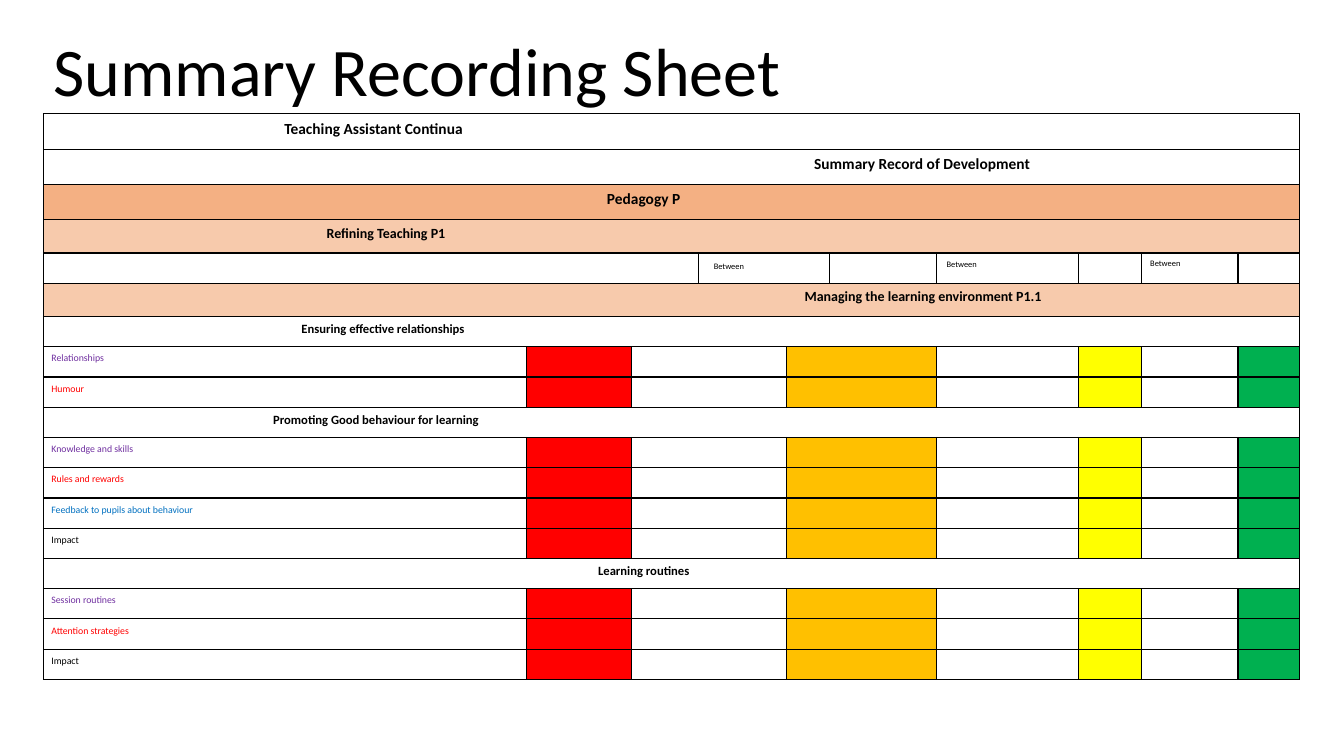
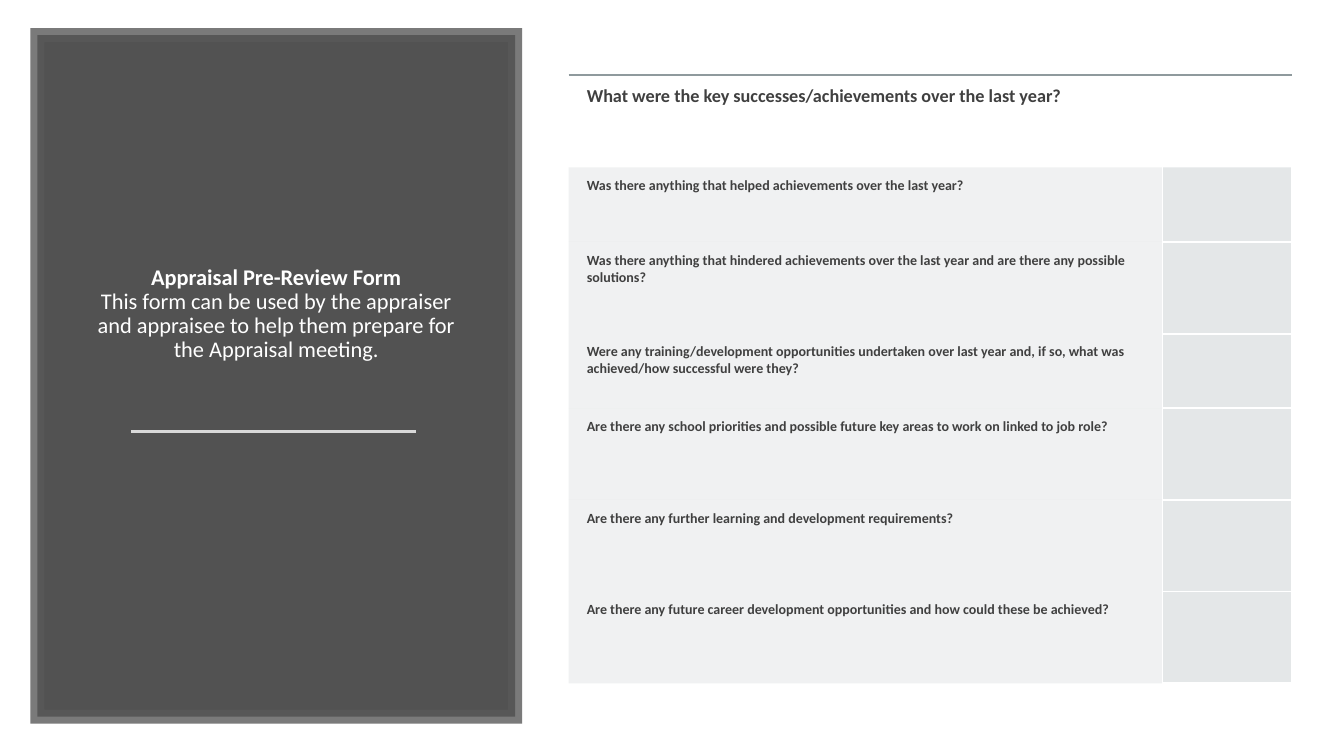
from dataclasses import dataclass

from lxml.etree import SubElement
from pptx import Presentation
from pptx.dml.color import RGBColor as Color
from pptx.enum.shapes import MSO_CONNECTOR as Connector, MSO_SHAPE as Preset
from pptx.enum.text import MSO_ANCHOR as Anchor, MSO_AUTO_SIZE as AutoSize, PP_ALIGN as Align
from pptx.oxml.ns import qn
from pptx.util import Inches, Pt


@dataclass(frozen=True)
class Theme:
    font: str = "Calibri"
    black: str = "000000"
    white: str = "FFFFFF"
    charcoal: str = "404040"
    panel_edge: str = "595959"
    panel_rule: str = "D9D9D9"
    form_rule: str = "8F9A9D"
    form_tint: str = "B4BCBE"
    orange: str = "F4B083"
    peach: str = "F7CAAC"
    red: str = "FF0000"
    amber: str = "FFC000"
    yellow: str = "FFFF00"
    green: str = "00B050"
    purple: str = "7030A0"
    blue: str = "0070C0"
    title_size: float = 48.6
    panel_size: float = 16
    lead_question_size: float = 13
    question_size: float = 10
    heading_size: float = 11
    subheading_size: float = 10
    group_size: float = 9
    label_size: float = 7
    scale_size: float = 6


THEME = Theme()
NO_STYLE_TABLE = "{2D5ABB26-0587-4C30-8999-92F81FD0307C}"

BANNER_SPLIT = 7
RECORD_COLUMNS = [4.79, 1.04, 0.67, 0.87, 0.43, 1.06, 1.41, 0.62, 0.96, 0.61]
SCALE_MARKS = {3: (0.15, 0.08), 6: (0.1, 0.06), 8: (0.09, 0.05)}
RATING_FILLS = {1: THEME.red, 4: THEME.amber, 7: THEME.yellow, 9: THEME.green}


@dataclass(frozen=True)
class Banner:
    text: str
    size: float
    height: float
    indent: float = 0
    right: float = 0.07
    align: Align = Align.LEFT
    fill: str = None


@dataclass(frozen=True)
class Rating:
    text: str
    color: str
    height: float = 0.3


@dataclass(frozen=True)
class Scale:
    height: float = 0.3


RECORD_ROWS = [
    Banner("Teaching Assistant Continua", THEME.heading_size, 0.35, indent=2.32),
    Banner("Summary Record of Development", THEME.heading_size, 0.35, right=0.48, align=Align.RIGHT),
    Banner("Pedagogy P", THEME.heading_size, 0.35, indent=1.64, align=Align.CENTER, fill=THEME.orange),
    Banner("Refining Teaching P1", THEME.subheading_size, 0.33, indent=2.74, fill=THEME.peach),
    Scale(),
    Banner("Managing the learning environment P1.1", THEME.subheading_size, 0.33,
           right=0.37, align=Align.RIGHT, fill=THEME.peach),
    Banner("Ensuring effective relationships", THEME.group_size, 0.3, indent=2.49),
    Rating("Relationships", THEME.purple),
    Rating("Humour", THEME.red),
    Banner("Promoting Good behaviour for learning", THEME.group_size, 0.3, indent=2.21),
    Rating("Knowledge and skills", THEME.purple),
    Rating("Rules and rewards", THEME.red),
    Rating("Feedback to pupils about behaviour", THEME.blue),
    Rating("Impact", THEME.black),
    Banner("Learning routines", THEME.group_size, 0.3, indent=1.64, align=Align.CENTER),
    Rating("Session routines", THEME.purple),
    Rating("Attention strategies", THEME.red),
    Rating("Impact", THEME.black),
]

QUESTIONS = [
    ("What were the key successes/achievements over the last year?", 0.92),
    ("Was there anything that helped achievements over the last year?", 0.74),
    ("Was there anything that hindered achievements over the last year and are there any possible solutions?", 0.91),
    ("Were any training/development opportunities undertaken over last year and, if so, "
     "what was achieved/how successful were they?", 0.74),
    ("Are there any school priorities and possible future key areas to work on linked to job role?", 0.91),
    ("Are there any further learning and development requirements?", 0.91),
    ("Are there any future career development opportunities and how could these be achieved?", 0.91),
]


def rgb(value):
    return Color.from_string(value)


def set_opacity(parent, percent):
    color = parent.find(qn("a:solidFill")).find(qn("a:srgbClr"))
    SubElement(color, qn("a:alpha")).set("val", str(percent * 1000))


def format_paragraph(paragraph, size, color, bold=False, align=Align.LEFT, spacing=1.0):
    paragraph.alignment = align
    paragraph.line_spacing = spacing
    for run in paragraph.runs:
        font = run.font
        font.name, font.size, font.bold = THEME.font, Pt(size), bold
        font.color.rgb = rgb(color)


def indent_paragraph(paragraph, indent):
    properties = paragraph._p.get_or_add_pPr()
    properties.set("marL", str(Inches(indent)))
    properties.set("indent", "0")


def place_title(slide, box, text, size, color, align, anchor, bold_lines=()):
    title = slide.shapes.title
    title.left, title.top, title.width, title.height = map(Inches, box)
    text_frame = title.text_frame
    text_frame.text = text
    text_frame.word_wrap = True
    text_frame.auto_size = AutoSize.NONE
    text_frame.vertical_anchor = anchor
    for index, paragraph in enumerate(text_frame.paragraphs):
        paragraph.space_before = Pt(0)
        format_paragraph(paragraph, size, color, index in bold_lines, align, 0.9)
    return title


def add_plain_table(slide, left, top, widths, heights):
    frame = slide.shapes.add_table(len(heights), len(widths), Inches(left), Inches(top),
                                   Inches(sum(widths)), Inches(sum(heights)))
    table = frame.table
    table.first_row = table.horz_banding = False
    table._tbl.tblPr.find(qn("a:tableStyleId")).text = NO_STYLE_TABLE
    for column, width in zip(table.columns, widths):
        column.width = Inches(width)
    for row, height in zip(table.rows, heights):
        row.height = Inches(height)
    for cell in table.iter_cells():
        set_margins(cell, 0.01, 0.02, 0.01, 0)
        paragraph = cell.text_frame.paragraphs[0]
        SubElement(paragraph._p, qn("a:endParaRPr")).set("sz", "800")
    return table


def set_margins(cell, left, top, right, bottom):
    cell.margin_left, cell.margin_top = Inches(left), Inches(top)
    cell.margin_right, cell.margin_bottom = Inches(right), Inches(bottom)


def style_cell(cell, borders, fill=None, opacity=100):
    properties = cell._tc.get_or_add_tcPr()
    for side in "LRTB":
        color, width = borders.get(side, (None, 0))
        line = SubElement(properties, qn(f"a:ln{side}"), w=str(Pt(width)))
        if color:
            solid = SubElement(line, qn("a:solidFill"))
            SubElement(solid, qn("a:srgbClr")).set("val", color)
        else:
            SubElement(line, qn("a:noFill"))
    if fill:
        cell.fill.solid()
        cell.fill.fore_color.rgb = rgb(fill)
        if opacity < 100:
            set_opacity(properties, opacity)
    else:
        cell.fill.background()


def write_cell(cell, text, margins, size, color, bold=False, align=Align.LEFT, spacing=1.07):
    cell.text_frame.text = text
    set_margins(cell, *margins)
    format_paragraph(cell.text_frame.paragraphs[0], size, color, bold, align, spacing)


def merge_spans(table, row, spans):
    for first, last in spans:
        table.cell(row, first).merge(table.cell(row, last))


def borders_for(sides):
    return {side: (THEME.black, 1) for side in sides}


def fill_banner(table, row, banner):
    last = len(RECORD_COLUMNS) - 1
    merge_spans(table, row, [(0, BANNER_SPLIT - 1), (BANNER_SPLIT, last)])
    for column, sides in ((0, "LTB"), (BANNER_SPLIT, "TRB")):
        style_cell(table.cell(row, column), borders_for(sides), banner.fill)
    heading = table.cell(row, 0)
    write_cell(heading, banner.text, (0.07, 0.04, banner.right, 0.04),
               banner.size, THEME.black, True, banner.align)
    indent_paragraph(heading.text_frame.paragraphs[0], banner.indent)


def fill_grid_row(table, row, spans, fills):
    merge_spans(table, row, spans)
    for column in range(len(RECORD_COLUMNS)):
        cell = table.cell(row, column)
        if not cell.is_spanned:
            style_cell(cell, borders_for("LRTB"), fills.get(column))


def fill_scale(table, row):
    fill_grid_row(table, row, [(0, 2), (3, 4)], {})
    for column, (left, top) in SCALE_MARKS.items():
        write_cell(table.cell(row, column), "Between", (left, top, 0.01, 0),
                   THEME.scale_size, THEME.black)


def fill_rating(table, row, rating):
    fill_grid_row(table, row, [(2, 3), (4, 5)], RATING_FILLS)
    write_cell(table.cell(row, 0), rating.text, (0.08, 0.05, 0.01, 0),
               THEME.label_size, rating.color)


def add_record_table(slide, left, top):
    heights = [entry.height for entry in RECORD_ROWS]
    table = add_plain_table(slide, left, top, RECORD_COLUMNS, heights)
    for row, entry in enumerate(RECORD_ROWS):
        if isinstance(entry, Banner):
            fill_banner(table, row, entry)
        elif isinstance(entry, Rating):
            fill_rating(table, row, entry)
        else:
            fill_scale(table, row)


def add_form_panel(slide, left, top, width, height):
    panel = slide.shapes.add_shape(Preset.RECTANGLE, *map(Inches, (left, top, width, height)))
    panel.shadow.inherit = False
    panel.fill.solid()
    panel.fill.fore_color.rgb = rgb(THEME.charcoal)
    panel.line.color.rgb = rgb(THEME.panel_edge)
    panel.line.width = Pt(10)
    properties = panel._element.spPr
    outline = properties.find(qn("a:ln"))
    set_opacity(properties, 90)
    set_opacity(outline, 80)
    SubElement(outline, qn("a:miter")).set("lim", "800000")

    title = place_title(
        slide, (left + 0.47, top + 0.65, 3.8, 2.65),
        "Appraisal Pre-Review Form\n"
        "This form can be used by the appraiser and appraisee to help them prepare for the Appraisal meeting.",
        THEME.panel_size, THEME.white, Align.CENTER, Anchor.BOTTOM, bold_lines=(0,))
    slide.shapes._spTree.append(title._element)

    rule_left, rule_top = left + 0.93, top + 3.93
    rule = slide.shapes.add_connector(Connector.STRAIGHT, Inches(rule_left), Inches(rule_top),
                                      Inches(rule_left + 2.83), Inches(rule_top))
    rule.line.color.rgb = rgb(THEME.panel_rule)
    rule.line.width = Pt(1.75)
    SubElement(rule._element.spPr, qn("a:effectLst"))


def add_question_table(slide, left, top):
    table = add_plain_table(slide, left, top, [5.89, 1.28], [height for _, height in QUESTIONS])
    divider = (THEME.white, 1.5)
    for row, (question, _) in enumerate(QUESTIONS):
        prompt, answer = table.cell(row, 0), table.cell(row, 1)
        if row == 0:
            size, inset = THEME.lead_question_size, 0.11
            for cell in (prompt, answer):
                style_cell(cell, {"T": (THEME.form_rule, 1.5)})
        else:
            size, inset = THEME.question_size, 0.1
            style_cell(prompt, {"R": divider}, THEME.form_tint, 20)
            sides = "LRB" if row == 1 else "LRTB"
            style_cell(answer, {side: divider for side in sides}, THEME.form_tint, 35)
        write_cell(prompt, question, (0.18, inset, inset, inset), size, THEME.charcoal, True, spacing=1.0)


def build_record_slide(slide):
    place_title(slide, (0.43, 0.35, 12.48, 0.78), "Summary Recording Sheet",
                THEME.title_size, THEME.black, Align.LEFT, Anchor.MIDDLE)
    add_record_table(slide, 0.43, 1.13)


def build_form_slide(slide):
    add_form_panel(slide, 0.37, 0.35, 4.74, 6.76)
    add_question_table(slide, 5.64, 0.74)


def main():
    presentation = Presentation()
    presentation.slide_width, presentation.slide_height = Inches(13.33), Inches(7.5)
    title_only = presentation.slide_layouts[5]
    for build in (build_record_slide, build_form_slide):
        build(presentation.slides.add_slide(title_only))
    presentation.save("out.pptx")


if __name__ == "__main__":
    main()
